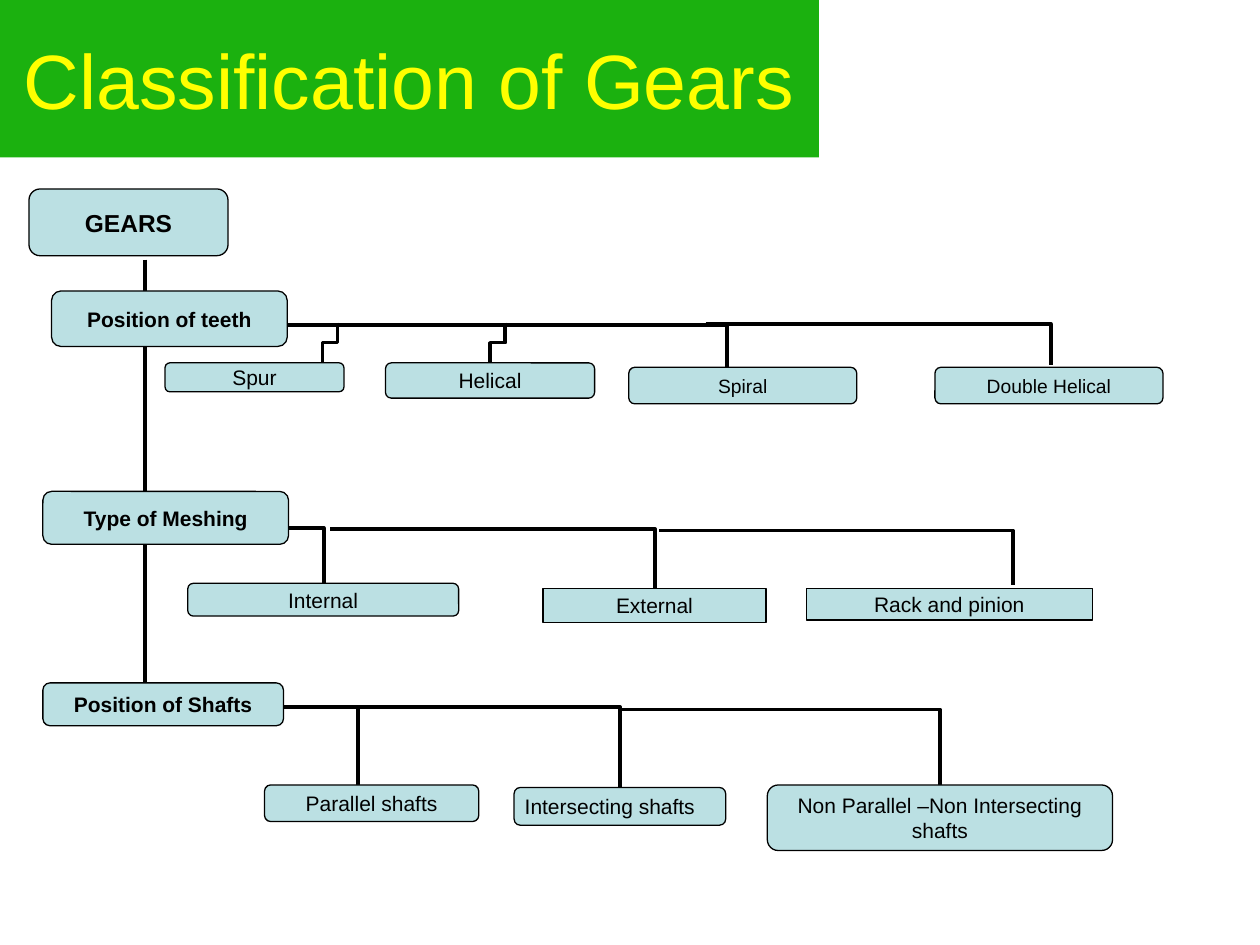
import dataclasses

import lxml.etree
import pptx
import pptx.dml.color
import pptx.enum.shapes
import pptx.enum.text
import pptx.oxml.ns
import pptx.util

SHAPE = pptx.enum.shapes.MSO_SHAPE
CONNECTOR = pptx.enum.shapes.MSO_CONNECTOR
ALIGN = pptx.enum.text.PP_ALIGN


@dataclasses.dataclass(frozen=True)
class Theme:
    """Colours, font and type sizes of the slide."""

    banner: str = "1BB10F"
    banner_text: str = "FFFF00"
    box: str = "BBE0E3"
    ink: str = "000000"
    font: str = "Arial"
    title: float = 44
    root: float = 14
    body: float = 12
    small: float = 11
    outline: float = 0.75
    hairline: float = 0


def colour(value):
    """Turn a hex string into a colour."""
    return pptx.dml.color.RGBColor.from_string(value)


def write_text(shape, text, *, font, size, color, bold=False, align=ALIGN.CENTER, inset=(0.05, 0.02)):
    """Put one formatted, vertically centred paragraph in a shape."""
    frame = shape.text_frame
    frame.word_wrap = True
    frame.vertical_anchor = pptx.enum.text.MSO_ANCHOR.MIDDLE
    frame.margin_left = frame.margin_right = pptx.util.Inches(inset[0])
    frame.margin_top = frame.margin_bottom = pptx.util.Inches(inset[1])
    paragraph = frame.paragraphs[0]
    paragraph.alignment = align
    run = paragraph.add_run()
    run.text = text
    run.font.name = font
    run.font.size = pptx.util.Pt(size)
    run.font.bold = bold
    run.font.color.rgb = colour(color)


class GearChart:
    """Draws the tree on a grid of 100 columns and 75 rows."""

    def __init__(self, presentation, theme):
        """Add a blank slide and measure its grid."""
        self.theme = theme
        self.slide = presentation.slides.add_slide(presentation.slide_layouts[6])
        self.column = presentation.slide_width / 100
        self.row = presentation.slide_height / 75

    def place(self, columns, rows):
        """Convert a grid pair to slide lengths."""
        return round(columns * self.column), round(rows * self.row)

    def panel(self, kind, left, top, width, height, fill):
        """Add a flat filled shape."""
        shape = self.slide.shapes.add_shape(kind, *self.place(left, top), *self.place(width, height))
        shape.shadow.inherit = False
        shape.fill.solid()
        shape.fill.fore_color.rgb = colour(fill)
        return shape

    def banner(self, text, width, height):
        """Add the title banner in the top left corner."""
        shape = self.panel(SHAPE.RECTANGLE, 0, 0, width, height, self.theme.banner)
        shape.line.fill.background()
        write_text(shape, text, font=self.theme.font, size=self.theme.title,
                   color=self.theme.banner_text, inset=(0.1, 0.05))

    def box(self, text, left, top, width, height, kind=SHAPE.ROUNDED_RECTANGLE, size=None, **style):
        """Add an outlined, labelled box."""
        shape = self.panel(kind, left, top, width, height, self.theme.box)
        shape.line.color.rgb = colour(self.theme.ink)
        shape.line.width = pptx.util.Pt(self.theme.outline)
        write_text(shape, text, font=self.theme.font, size=size or self.theme.body,
                   color=self.theme.ink, **style)

    def line(self, start, end, kind=CONNECTOR.STRAIGHT):
        """Add a hairline connector without shadow."""
        connector = self.slide.shapes.add_connector(kind, *self.place(*start), *self.place(*end))
        connector.line.color.rgb = colour(self.theme.ink)
        connector.line.width = pptx.util.Pt(self.theme.hairline)
        properties = connector._element.spPr
        lxml.etree.SubElement(properties, pptx.oxml.ns.qn("a:effectLst"))
        return properties

    def branch(self, start, end):
        """Add a connector that runs across and then down."""
        properties = self.line(start, end, CONNECTOR.ELBOW)
        properties.find(pptx.oxml.ns.qn("a:prstGeom")).set("prst", "bentConnector2")

    def drop(self, start, end):
        """Add a connector that runs down, left and down again."""
        middle_x, middle_y = (start[0] + end[0]) / 2, (start[1] + end[1]) / 2
        half_run, half_drop = (start[0] - end[0]) / 2, (end[1] - start[1]) / 2
        properties = self.line((middle_x - half_drop, middle_y - half_run),
                               (middle_x + half_drop, middle_y + half_run), CONNECTOR.ELBOW)
        properties.find(pptx.oxml.ns.qn("a:xfrm")).set("rot", "5400000")


def main():
    """Build and save the slide."""
    presentation = pptx.Presentation()
    presentation.slide_width = pptx.util.Inches(10)
    presentation.slide_height = pptx.util.Inches(7.5)
    theme = Theme()
    chart = GearChart(presentation, theme)

    chart.banner("Classification of Gears", 65, 12.5)
    chart.line((11.5, 20.6), (11.5, 55.9))
    branches = [
        ((21.5, 25.8), (57.7, 29.1)), ((56, 25.7), (83.4, 29)),
        ((22.8, 41.9), (25.7, 46.3)), ((26.2, 42), (52, 46.7)), ((52.3, 42.1), (80.4, 46.4)),
        ((21.3, 56.1), (28.4, 62.5)), ((27.7, 56.1), (49.2, 62.5)), ((49.2, 56.3), (74.6, 62.3)),
    ]
    for start, end in branches:
        chart.branch(start, end)
    for column in (26.8, 40.1):
        chart.drop((column, 25.6), (column - 1.2, 28.8))

    chart.box("GEARS", 2.3, 15, 15.8, 5.3, size=theme.root, bold=True)
    headings = [
        ("Position of teeth", 4.1, 23.1, 18.7, 4.4),
        ("Type of Meshing", 3.4, 39, 19.5, 4.2),
        ("Position of Shafts", 3.4, 54.2, 19.1, 3.4),
    ]
    for heading in headings:
        chart.box(*heading, bold=True)

    leaves = [
        ("Spur", 13.1, 28.8, 14.2, 2.3),
        ("Helical", 30.6, 28.8, 16.6, 2.8),
        ("Internal", 14.9, 46.3, 21.5, 2.6),
        ("Parallel shafts", 21, 62.3, 17, 2.9),
        ("Non Parallel –Non Intersecting shafts", 60.9, 62.3, 27.4, 5.2),
    ]
    for leaf in leaves:
        chart.box(*leaf)
    chart.box("Intersecting shafts", 40.8, 62.5, 16.8, 3, align=ALIGN.LEFT, inset=(0.07, 0.03))
    for text, left in (("Spiral", 49.9), ("Double Helical", 74.2)):
        chart.box(text, left, 29.15, 18.1, 2.9, size=theme.small)
    for text, left, width, height in (("External", 43.1, 17.7, 2.7), ("Rack and pinion", 64, 22.7, 2.5)):
        chart.box(text, left, 46.7, width, height, kind=SHAPE.RECTANGLE)

    presentation.save("out.pptx")


if __name__ == "__main__":
    main()
